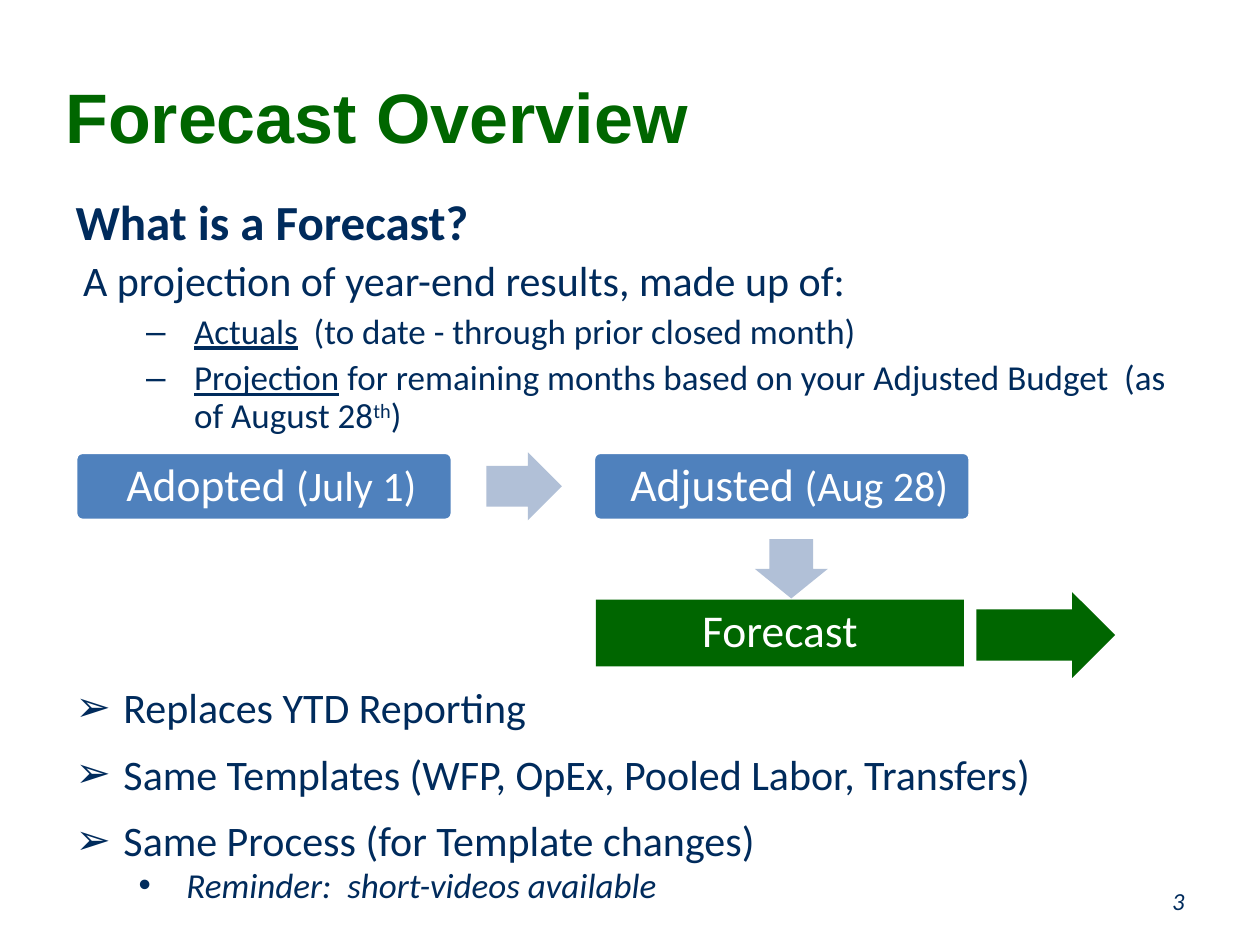
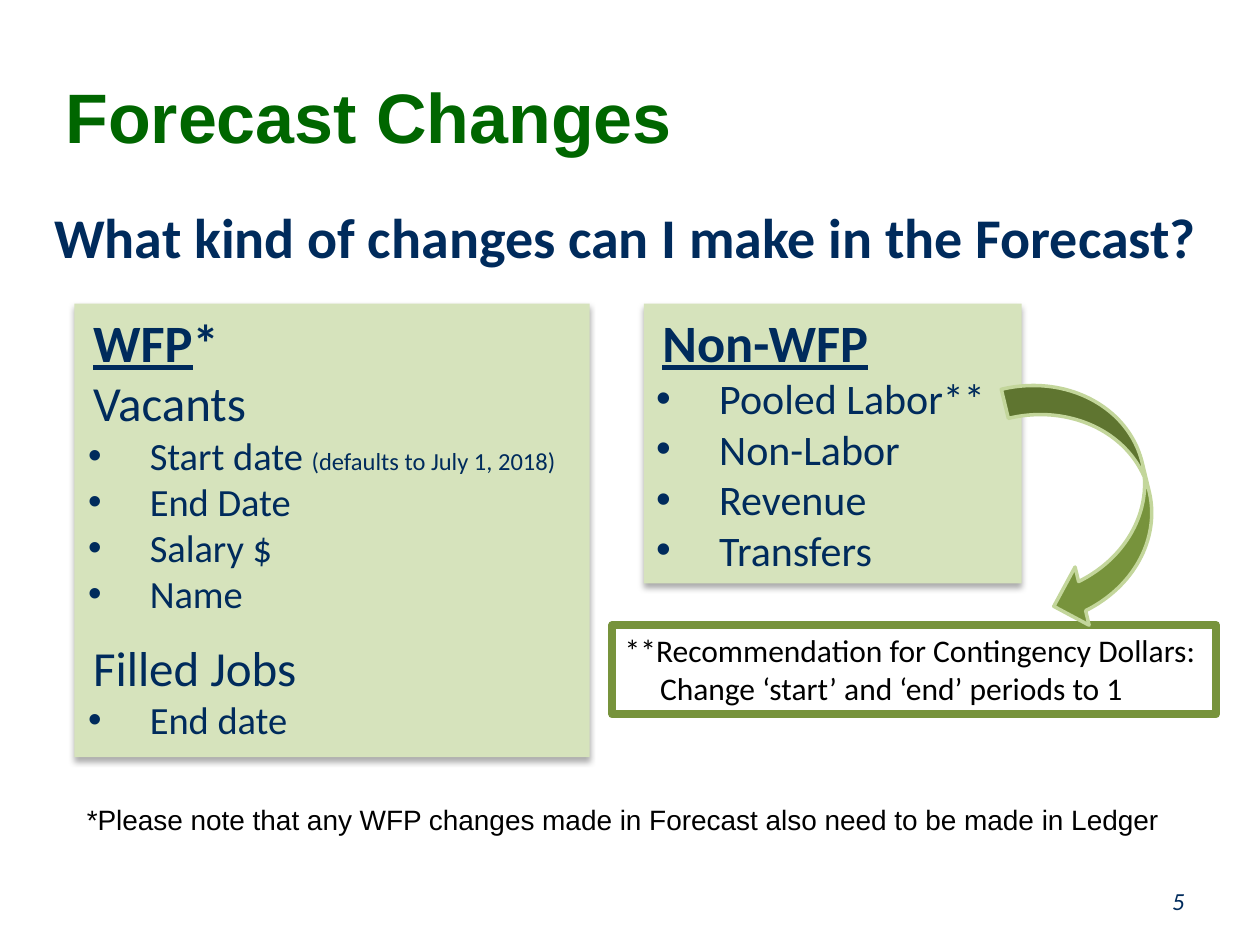
from lxml import etree
from pptx import Presentation
from pptx.dml.color import RGBColor
from pptx.enum.shapes import MSO_SHAPE
from pptx.enum.text import MSO_ANCHOR, MSO_AUTO_SIZE, PP_ALIGN
from pptx.oxml.ns import qn
from pptx.util import Inches, Pt

RECT = MSO_SHAPE.RECTANGLE
ROUND = MSO_SHAPE.ROUNDED_RECTANGLE
RIGHT = MSO_SHAPE.RIGHT_ARROW
DOWN = MSO_SHAPE.DOWN_ARROW
CURVE = MSO_SHAPE.CURVED_LEFT_ARROW
MIDDLE = MSO_ANCHOR.MIDDLE
TOP = MSO_ANCHOR.TOP
FIXED = MSO_AUTO_SIZE.NONE
LEFT, CENTER, END = PP_ALIGN.LEFT, PP_ALIGN.CENTER, PP_ALIGN.RIGHT

GREEN = RGBColor(0x00, 0x66, 0x00)
NAVY = RGBColor(0x00, 0x2B, 0x5C)
BLUE = RGBColor(0x4F, 0x81, 0xBD)
HAZE = RGBColor(0xB1, 0xC0, 0xD7)
SAGE = RGBColor(0xD6, 0xE3, 0xBC)
OLIVE = RGBColor(0x77, 0x93, 0x3C)
LIME = RGBColor(0xC3, 0xD6, 0x9B)
WHITE = RGBColor(0xFF, 0xFF, 0xFF)
BLACK = RGBColor(0x00, 0x00, 0x00)


def write(frame, rows, color=NAVY, face="Calibri", align=LEFT, anchor=TOP):
    frame.word_wrap = True
    frame.auto_size = FIXED
    frame.vertical_anchor = anchor
    for i, (runs, left, hang, mark, before, lines, level) in enumerate(rows):
        para = frame.paragraphs[0] if i == 0 else frame.add_paragraph()
        para.level = level
        para.alignment = align
        para.line_spacing = lines
        para.space_before = Pt(before)
        props = para._p.get_or_add_pPr()
        props.set("marL", str(Inches(left)))
        props.set("indent", str(Inches(hang)))
        if mark:
            tint = etree.SubElement(props, qn("a:buClr"))
            etree.SubElement(tint, qn("a:srgbClr"), val=str(NAVY))
            etree.SubElement(props, qn("a:buFont"), typeface="Arial")
            etree.SubElement(props, qn("a:buChar"), char=mark)
        else:
            etree.SubElement(props, qn("a:buNone"))
        for text, size, style in runs:
            run = para.add_run()
            run.text = text
            font = run.font
            font.name, font.size = face, Pt(size)
            font.color.rgb = color
            font.bold = "b" in style
            font.italic = "i" in style
            font.underline = "u" in style
            if "^" in style:
                run._r.get_or_add_rPr().set("baseline", "30000")


def draw(slide, kind, place, fill=None, line=None, width=2):
    shape = slide.shapes.add_shape(kind, *map(Inches, place))
    shape.shadow.inherit = False
    if fill is None:
        shape.fill.background()
    else:
        shape.fill.solid()
        shape.fill.fore_color.rgb = fill
    if line is None:
        shape.line.fill.background()
    else:
        shape.line.color.rgb = line
        shape.line.width = Pt(width)
    return shape


deck = Presentation()
deck.slide_width, deck.slide_height = Inches(10), Inches(7.5)

pages = [
    ("Forecast Overview", "3", (0.5, 1.52, 9.1, 5.72), [
        ([("What is a Forecast?", 28, "b")], 0, 0, "", 0, 0.9, 0),
        ([("A projection of year-end results, made up of:", 24, "")],
         0.06, 0, "", 5.6, 0.9, 0),
        ([("Actuals", 20, "u"),
          ("  (to date - through prior closed month)", 20, "")],
         0.94, -0.38, "–", 4.8, 0.9, 1),
        ([("Projection", 20, "u"),
          (" for remaining months based on your Adjusted Budget  (as of August 28", 20, ""),
          ("th", 20, "^"), (")", 20, "")],
         0.94, -0.38, "–", 4.8, 0.9, 1),
        ([("Replaces YTD Reporting", 24, "")], 0.38, -0.38, "➢", 146, 0.8, 0),
        ([("Same Templates (WFP, OpEx, Pooled Labor, Transfers)", 24, "")],
         0.38, -0.38, "➢", 15, 0.8, 0),
        ([("Same Process (for Template changes)", 24, "")],
         0.38, -0.38, "➢", 15, 0.8, 0),
        ([("Reminder:  short-videos available", 20, "i")],
         0.88, -0.38, "•", 3.8, 0.8, 1),
    ]),
    ("Forecast Changes", "5", (0.33, 1.56, 9.42, 0.71), [
        ([("What kind of changes can I make in the Forecast?", 32, "b")],
         0, 0, "", 0, 1, 0),
    ]),
]

slides = []
for title, number, place, rows in pages:
    slide = deck.slides.add_slide(deck.slide_layouts[1])
    head, body = slide.placeholders
    spots = [(head, (0.42, 0.42, 9.08, 1)), (body, place)]
    for holder, spot in spots:
        holder.left, holder.top, holder.width, holder.height = map(Inches, spot)
    write(head.text_frame, [([(title, 40, "b")], 0, 0, "", 0, 1, 0)],
          GREEN, "Arial", LEFT, MIDDLE)
    write(body.text_frame, rows)
    foot = slide.shapes.add_textbox(*map(Inches, (7.17, 6.95, 2.33, 0.4)))
    write(foot.text_frame, [([(number, 14, "i")], 0, 0, "", 0, 1, 0)],
          align=END, anchor=MIDDLE)
    slides.append(slide)

flow, edits = slides

steps = [
    (ROUND, (0.6, 3.59, 2.99, 0.54), BLUE, WHITE, 0.16, 0.04,
     [("Adopted ", 26, ""), ("(July 1)", 24, "")]),
    (ROUND, (4.71, 3.59, 2.99, 0.54), BLUE, WHITE, 0.16, 0.04,
     [("Adjusted ", 26, ""), ("(Aug 28)", 24, "")]),
    (RECT, (4.73, 4.76, 2.92, 0.53), GREEN, None, 0.11, 0.11,
     [("Forecast", 26, "")]),
]
for kind, place, fill, line, left, right, runs in steps:
    step = draw(flow, kind, place, fill, line)
    if kind == ROUND:
        step.adjustments[0] = 0.1
    frame = step.text_frame
    frame.margin_left, frame.margin_right = Inches(left), Inches(right)
    write(frame, [(runs, 0, 0, "", 0, 0.9, 0)], WHITE, align=CENTER, anchor=MIDDLE)

arrows = [
    (RIGHT, (3.86, 3.59, 0.6, 0.54), HAZE),
    (DOWN, (5.99, 4.28, 0.58, 0.47), HAZE),
    (RIGHT, (7.75, 4.7, 1.1, 0.68), GREEN),
]
for kind, place, fill in arrows:
    arrow = draw(flow, kind, place, fill)
    arrow.adjustments[0], arrow.adjustments[1] = 0.6, 0.5

cards = [
    ((0.59, 2.41, 4.09, 3.6), [
        ([("WFP", 30, "bu"), ("*", 30, "b")], 0.06, -0.01, "", 0, 1, 0),
        ([("Vacants", 28, "")], 0.06, -0.01, "", 0, 1, 0),
        ([("Start date ", 22, ""), ("(defaults to July 1, 2018)", 14, "")],
         0.5, -0.49, "•", 0, 1, 0),
        *[([(text, 22, "")], 0.5, -0.49, "•", 0, 1, 0)
          for text in ("End Date", "Salary $", "Name")],
        ([("Filled Jobs", 28, "")], 0.06, -0.01, "", 12, 1, 0),
        ([("End date", 22, "")], 0.5, -0.49, "•", 0, 1, 0),
    ]),
    ((5.11, 2.41, 3, 2.22), [
        ([("Non-WFP", 30, "bu")], 0.06, -0.01, "", 0, 1, 0),
        *[([(text, 24, "")], 0.5, -0.5, "•", 0, 1, 0)
          for text in ("Pooled Labor**", "Non-Labor", "Revenue", "Transfers")],
    ]),
]
for place, rows in cards:
    card = draw(edits, RECT, place, SAGE)
    effect = card._element.spPr.find(qn("a:effectLst"))
    shade = etree.SubElement(effect, qn("a:outerShdw"), blurRad=str(Pt(3.5)),
                             dist=str(Pt(2.2)), dir="5400000", rotWithShape="0")
    tint = etree.SubElement(shade, qn("a:srgbClr"), val=str(BLACK))
    etree.SubElement(tint, qn("a:alpha"), val="32000")
    write(card.text_frame, rows)

tip = draw(edits, RECT, (4.86, 4.96, 4.79, 0.71), None, OLIVE, 4.5)
write(tip.text_frame, [
    ([("**Recommendation for Contingency Dollars:", 18, "")], 0, 0, "", 0, 1, 0),
    ([("Change ‘start’ and ‘end’ periods to 1", 18, "")], 0.28, 0, "", 0, 1, 0),
], BLACK)

note = edits.shapes.add_textbox(*map(Inches, (0.59, 6.27, 8.91, 0.65)))
note.text_frame.margin_top = Inches(0.1)
write(note.text_frame, [
    ([("*Please note that any WFP changes made in Forecast also need to be made in Ledger",
       16, "")], 0, 0, "", 0, 1, 0),
], BLACK, "Arial")

swoop = draw(edits, CURVE, (8.17, 2.95, 0.95, 2.01), OLIVE, LIME)
swoop.rotation = 346.4

deck.save("out.pptx")
